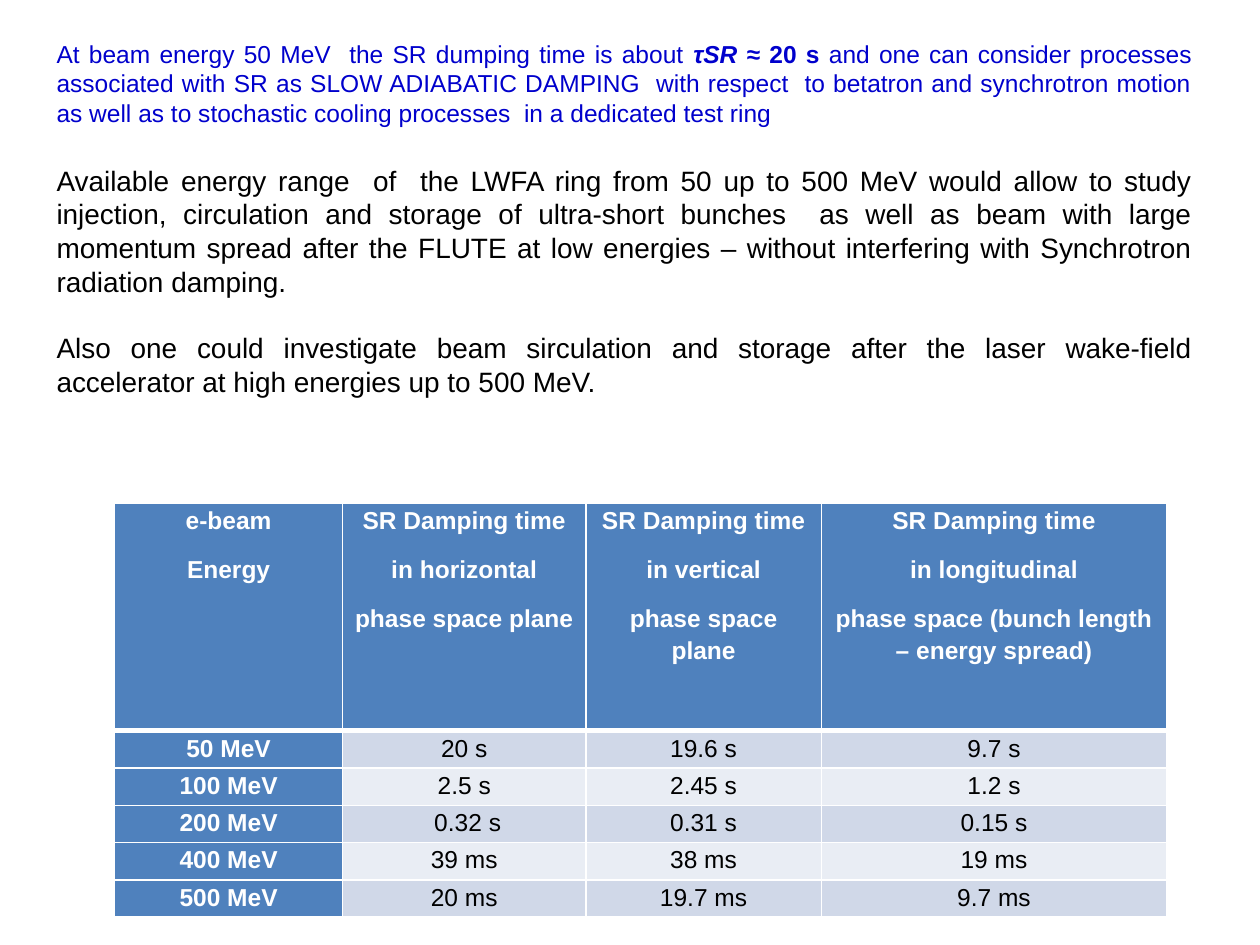
"""Build a slide on synchrotron radiation damping times in a test ring."""
from lxml import etree
from pptx import Presentation, util as u
from pptx.dml.color import RGBColor
from pptx.enum import text
from pptx.oxml import ns

COLORS = {"accent": "0000CC", "body": "000000", "light": "FFFFFF",
          "head": "4F81BD", "odd": "D0D8E8", "even": "E9EDF4"}
ALIGN = text.PP_ALIGN

INTRO = [
    ("At beam energy 50 MeV  the SR dumping time is about ", {}),
    ("τSR ", {"bold": True, "italic": True}),
    ("≈ 20 s ", {"bold": True}),
    ("and one can consider processes associated with SR as SLOW ADIABATIC "
     "DAMPING  with respect  to betatron and synchrotron motion as well as to "
     "stochastic cooling processes  in a dedicated test ring", {}),
]
ENERGY_RANGE = [
    ("Available energy range  of  the LWFA ring from 50 up to 500 MeV would "
     "allow to study injection, circulation and storage of ultra-short bunches"
     "  as well as beam with large momentum spread after the FLUTE at low "
     "energies – without interfering with Synchrotron radiation damping.", {}),
]
HIGH_ENERGY = [
    ("Also one could investigate beam sirculation and storage after the laser "
     "wake-field accelerator at high energies up to 500 MeV.", {}),
]
DAMPING_TIMES = [
    [["e-beam", "Energy"],
     ["SR Damping time", "in horizontal", "phase space plane"],
     ["SR Damping time", "in vertical", "phase space plane"],
     ["SR Damping time", "in longitudinal",
      "phase space (bunch length – energy spread)"]],
    [["50 MeV"], ["20 s"], ["19.6 s"], ["9.7 s"]],
    [["100 MeV"], ["2.5 s"], ["2.45 s"], ["1.2 s"]],
    [["200 MeV"], [" 0.32 s"], ["0.31 s"], ["0.15 s"]],
    [["400 MeV"], ["39 ms"], ["38 ms"], ["19 ms"]],
    [["500 MeV"], ["20 ms"], ["19.7 ms"], ["9.7 ms"]],
]


class Deck:
    """Hold the style and the current slide, laid out on a 100 by 75 grid."""

    FONT = "Arial"
    COLUMNS, ROWS = 100, 75

    def __init__(self):
        self.show = Presentation()
        self.show.slide_width, self.show.slide_height = u.Inches(10), u.Inches(7.5)
        self.slide = self.show.slides.add_slide(self.show.slide_layouts[6])

    def across(self, columns):
        return u.Emu(round(self.show.slide_width * columns / self.COLUMNS))

    def down(self, rows):
        return u.Emu(round(self.show.slide_height * rows / self.ROWS))

    def area(self, left, top, width, height):
        return (self.across(left), self.down(top),
                self.across(width), self.down(height))

    def run(self, paragraph, words, size, color, bold=False, italic=False):
        run = paragraph.add_run()
        run.text = words
        font = run.font
        font.name, font.size = self.FONT, u.Pt(size)
        font.bold, font.italic = bold, italic
        font.color.rgb = RGBColor.from_string(COLORS[color])

    def paragraph(self, frame, index):
        return frame.add_paragraph() if index else frame.paragraphs[0]

    def prose(self, area, passages):
        frame = self.slide.shapes.add_textbox(*self.area(*area)).text_frame
        frame.word_wrap = True
        for index, (runs, size, color, gap) in enumerate(passages):
            paragraph = self.paragraph(frame, index)
            paragraph.alignment = ALIGN.JUSTIFY
            if gap:
                paragraph.space_before = u.Pt(gap)
            for words, emphasis in runs:
                self.run(paragraph, words, size, color, **emphasis)

    def border(self, cell, widths):
        properties = cell._tc.get_or_add_tcPr()
        for place, (side, width) in enumerate(widths.items()):
            line = etree.Element(ns.qn(f"a:ln{side}"), w=str(u.Pt(width)))
            fill = etree.SubElement(line, ns.qn("a:solidFill"))
            etree.SubElement(fill, ns.qn("a:srgbClr"), val=COLORS["light"])
            properties.insert(place, line)

    def cell(self, cell, lines, fill, color, bold):
        cell.margin_left = cell.margin_right = u.Inches(0.07)
        cell.margin_top = cell.margin_bottom = 0
        cell.fill.solid()
        cell.fill.fore_color.rgb = RGBColor.from_string(COLORS[fill])
        for index, words in enumerate(lines):
            paragraph = self.paragraph(cell.text_frame, index)
            paragraph.alignment = ALIGN.CENTER
            paragraph.line_spacing, paragraph.space_after = 1.15, u.Pt(10)
            self.run(paragraph, words, 14, color, bold)

    def table(self, left, top, widths, heights, rows):
        area = self.area(left, top, sum(widths), sum(heights))
        grid = self.slide.shapes.add_table(len(rows), len(widths), *area).table
        for column, width in zip(grid.columns, widths):
            column.width = self.across(width)
        for r, (row, height) in enumerate(zip(rows, heights)):
            grid.rows[r].height = self.down(height)
            for c, lines in enumerate(row):
                heading = r == 0 or c == 0
                fill = "head" if heading else "odd" if r % 2 else "even"
                self.cell(grid.cell(r, c), lines, fill,
                          "light" if heading else "body", heading)
                self.border(grid.cell(r, c), {
                    "L": 1, "R": 1, "T": 3 if r == 1 else 1, "B": 3 if r == 0 else 1})


def main():
    deck = Deck()
    deck.table(9.1, 39.9, [18.1, 19.3, 18.7, 27.4], [18.1] + [2.96] * 5,
               DAMPING_TIMES)
    deck.prose((3.5, 2.6, 92.1, 32.6), [
        (INTRO, 14, "accent", 0),
        (ENERGY_RANGE, 16, "body", 20.7),
        (HIGH_ENERGY, 16, "body", 19),
    ])
    deck.show.save("out.pptx")


if __name__ == "__main__":
    main()
